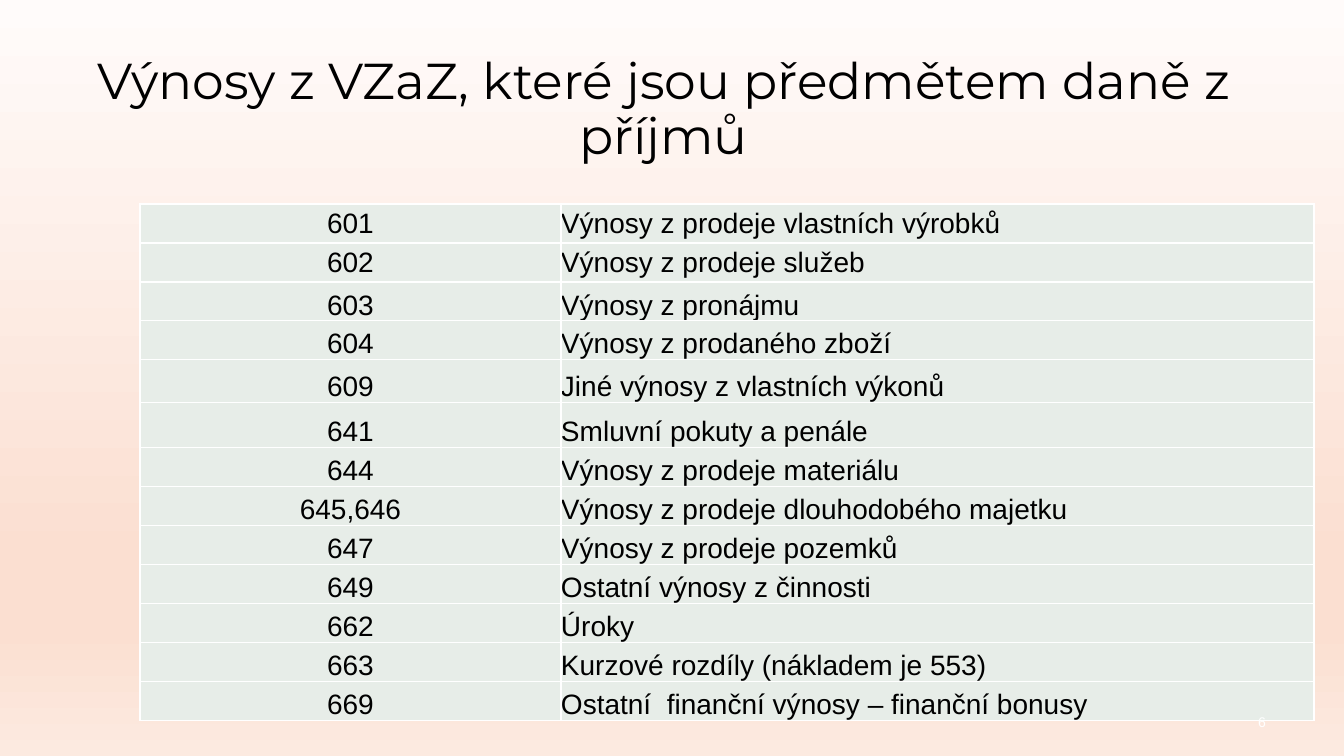
from dataclasses import dataclass

from lxml.etree import SubElement
from pptx import Presentation
from pptx.dml.color import RGBColor as RGB
from pptx.enum.text import MSO_ANCHOR as ANCHOR, PP_ALIGN as ALIGN
from pptx.oxml.ns import qn
from pptx.util import Emu, Pt

PX = 12192000 / 1344  # EMU in one px


@dataclass(frozen=True)
class Theme:
    text: str = "000000"
    white: str = "FFFFFF"
    cell: str = "E7EDE8"
    backdrop: tuple = ((0, "FFFBFA"), (74, "FBDFD1"), (83, "FBDFD1"), (100, "FCEAE0"))
    title_font: str = "Montserrat"
    body_font: str = "Arial"
    title_size: int = 36
    body_size: int = 20
    number_size: int = 10
    border: int = 1


ACCOUNTS = [
    ("601", "Výnosy z prodeje vlastních výrobků"),
    ("602", "Výnosy z prodeje služeb"),
    ("603", "Výnosy z pronájmu"),
    ("604", "Výnosy z prodaného zboží"),
    ("609", "Jiné výnosy z vlastních výkonů"),
    ("641", "Smluvní pokuty a penále"),
    ("644", "Výnosy z prodeje materiálu"),
    ("645,646", "Výnosy z prodeje dlouhodobého majetku"),
    ("647", "Výnosy z prodeje pozemků"),
    ("649", "Ostatní výnosy z činnosti"),
    ("662", "Úroky"),
    ("663", "Kurzové rozdíly (nákladem je 553)"),
    ("669", "Ostatní  finanční výnosy – finanční bonusy"),
]
ROW_HEIGHT = 39
TALL_ROWS = {"609": 43, "641": 45}


def px(n):
    return Emu(round(n * PX))


def write(tf, text, font, size, color, align=ALIGN.LEFT, spacing=None):
    p = tf.paragraphs[0]
    p.alignment = align
    if spacing:
        p.line_spacing = spacing
    r = p.add_run()
    r.text = text
    r.font.name, r.font.size = font, Pt(size)
    r.font.color.rgb = RGB.from_string(color)


class SlideBuilder:
    def __init__(self, s, theme):
        self.s, self.theme = s, theme

    def background(self):
        fill = self.s.background.fill
        fill.gradient()
        fill.gradient_angle = 270
        stops = self.s.element.find(".//" + qn("a:gsLst"))
        for stop in list(stops):
            stops.remove(stop)
        for pos, color in self.theme.backdrop:
            stop = SubElement(stops, qn("a:gs"), pos=str(pos * 1000))
            SubElement(stop, qn("a:srgbClr"), val=color)

    def text(self, x, y, w, h, text, **fmt):
        tf = self.s.shapes.add_textbox(px(x), px(y), px(w), px(h)).text_frame
        tf.word_wrap = True
        tf.vertical_anchor = ANCHOR.MIDDLE
        write(tf, text, **fmt)

    def table(self, x, y, widths, heights, rows):
        t = self.theme
        frame = self.s.shapes.add_table(len(rows), len(widths), px(x), px(y),
                                        px(sum(widths)), px(sum(heights)))
        table = frame.table
        table.first_row = table.horz_banding = False
        for col, w in zip(table.columns, widths):
            col.width = px(w)
        for row, h in zip(table.rows, heights):
            row.height = px(h)
        for i, values in enumerate(rows):
            for j, value in enumerate(values):
                cell = table.cell(i, j)
                cell.margin_left = cell.margin_right = 0
                cell.margin_top = cell.margin_bottom = 0
                cell.vertical_anchor = ANCHOR.MIDDLE if i < 2 else ANCHOR.BOTTOM
                self.borders(cell)
                cell.fill.solid()
                cell.fill.fore_color.rgb = RGB.from_string(t.cell)
                write(cell.text_frame, value, t.body_font, t.body_size, t.text,
                      align=ALIGN.LEFT if j else ALIGN.CENTER)

    def borders(self, cell):
        tc_pr = cell._tc.get_or_add_tcPr()
        for side in ("a:lnL", "a:lnR", "a:lnT", "a:lnB"):
            ln = SubElement(tc_pr, qn(side), w=str(Pt(self.theme.border)))
            fill = SubElement(ln, qn("a:solidFill"))
            SubElement(fill, qn("a:srgbClr"), val=self.theme.white)


def main():
    prs = Presentation()
    prs.slide_width, prs.slide_height = px(1344), px(756)
    theme = Theme()
    slide = SlideBuilder(prs.slides.add_slide(prs.slide_layouts[6]), theme)

    # Background and title
    slide.background()
    slide.text(60, 39, 1207, 143, "Výnosy z VZaZ, které jsou předmětem daně z příjmů",
               font=theme.title_font, size=theme.title_size, color=theme.text,
               align=ALIGN.CENTER, spacing=0.9)

    # Revenue accounts
    heights = [TALL_ROWS.get(account, ROW_HEIGHT) for account, _ in ACCOUNTS]
    slide.table(140, 204, (421, 753), heights, ACCOUNTS)

    # Slide number
    slide.text(1242, 706, 40, 32, "6", font=theme.body_font, size=theme.number_size,
               color=theme.white, align=ALIGN.CENTER)

    prs.save("out.pptx")


if __name__ == "__main__":
    main()
